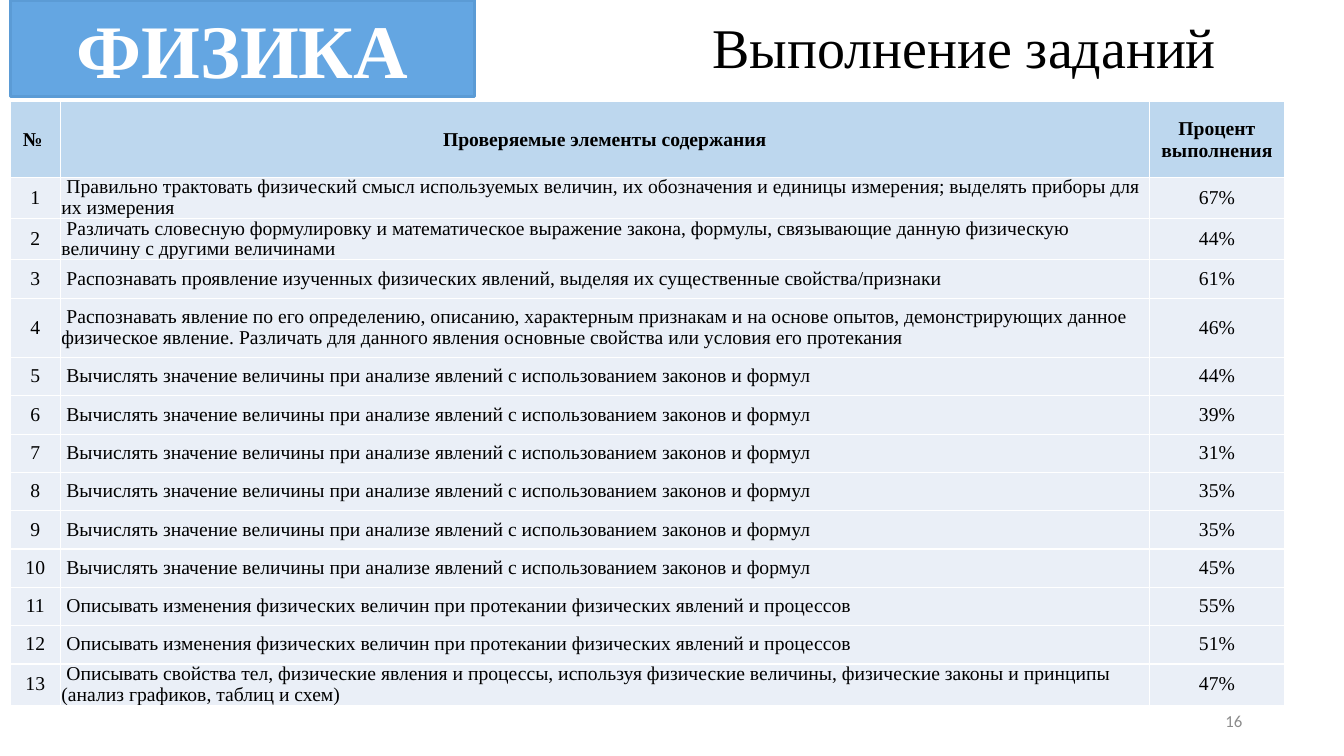
from lxml import etree
from pptx import Presentation
from pptx.dml.color import RGBColor
from pptx.enum.shapes import MSO_SHAPE
from pptx.enum.text import MSO_ANCHOR, MSO_AUTO_SIZE, PP_ALIGN
from pptx.oxml.ns import qn
from pptx.util import Inches, Pt

# Content
TITLE = "Выполнение заданий "
SUBJECT = "ФИЗИКА"
PAGE = "16"
HEADER = ("№ ", "Проверяемые элементы содержания", "Процент выполнения")
CALCULATE = "Вычислять значение величины при анализе явлений с использованием законов и формул"
DESCRIBE = "Описывать изменения физических величин при протекании физических явлений и процессов"
TASKS = [
    ("Правильно трактовать физический смысл используемых величин, их обозначения "
     "и единицы измерения; выделять приборы для их измерения", 67),
    ("Различать словесную формулировку и математическое выражение закона, формулы, "
     "связывающие данную физическую величину с другими величинами", 44),
    ("Распознавать проявление изученных физических явлений, выделяя их "
     "существенные свойства/признаки", 61),
    ("Распознавать явление по его определению, описанию, характерным признакам "
     "и на основе опытов, демонстрирующих данное физическое явление. Различать "
     "для данного явления основные свойства или условия его протекания", 46),
    (CALCULATE, 44),
    (CALCULATE, 39),
    (CALCULATE, 31),
    (CALCULATE, 35),
    (CALCULATE, 35),
    (CALCULATE, 45),
    (DESCRIBE, 55),
    (DESCRIBE, 51),
    ("Описывать свойства тел, физические явления и процессы, используя физические "
     "величины, физические законы и принципы (анализ графиков, таблиц и схем)", 47),
]

# Format
SERIF, SANS = "Times New Roman", "Calibri"
BLACK = RGBColor(0x00, 0x00, 0x00)
WHITE = RGBColor(0xFF, 0xFF, 0xFF)
GREY = RGBColor(0x8C, 0x8C, 0x8C)
BLUE = RGBColor(0x64, 0xA6, 0xE2)
BLUE_LINE = RGBColor(0x5B, 0x9B, 0xD5)
HEADER_FILL = RGBColor(0xBD, 0xD7, 0xEE)
ROW_FILL = RGBColor(0xEA, 0xEF, 0xF7)
LEFT, CENTER, RIGHT = PP_ALIGN.LEFT, PP_ALIGN.CENTER, PP_ALIGN.RIGHT
MIDDLE = MSO_ANCHOR.MIDDLE

COL_WIDTHS = (0.5, 10.8, 1.34)
HEADER_HEIGHT, ROW_HEIGHT = 0.75, 0.38
TALL_ROWS = {4: 0.59}
TASK_SPACING = 0.95  # keeps two-line rows compact


def write(tf, text, size=14, font=SERIF, color=BLACK, bold=False, align=CENTER, spacing=1.0):
    tf.word_wrap = True
    p = tf.paragraphs[0]
    p.alignment, p.line_spacing = align, spacing
    r = p.add_run()
    r.text = text
    r.font.name, r.font.size, r.font.bold = font, Pt(size), bold
    r.font.color.rgb = color


def add_borders(cell, color=WHITE, width=1):
    tcPr = cell._tc.get_or_add_tcPr()
    for side in ("a:lnL", "a:lnR", "a:lnT", "a:lnB"):
        ln = etree.SubElement(tcPr, qn(side), w=str(Pt(width)))
        fill = etree.SubElement(ln, qn("a:solidFill"))
        etree.SubElement(fill, qn("a:srgbClr"), val=str(color))


prs = Presentation()
prs.slide_width, prs.slide_height = Inches(13.33), Inches(7.5)
s = prs.slides.add_slide(prs.slide_layouts[5])

# Title
title = s.shapes.title
title.left, title.top = Inches(6.52), Inches(-0.04)
title.width, title.height = Inches(6.23), Inches(1)
title.line.color.rgb, title.line.width = WHITE, Pt(1)
tf = title.text_frame
tf.auto_size, tf.vertical_anchor = MSO_AUTO_SIZE.NONE, MIDDLE
write(tf, TITLE, size=40)

# Subject banner
sp = s.shapes.add_shape(MSO_SHAPE.RECTANGLE, Inches(0.1), 0, Inches(4.61), Inches(0.96))
sp.shadow.inherit = False
sp.fill.solid()
sp.fill.fore_color.rgb = BLUE
sp.line.color.rgb, sp.line.width = BLUE_LINE, Pt(2.25)
sp.text_frame.vertical_anchor = MIDDLE
write(sp.text_frame, SUBJECT, size=54, color=WHITE, bold=True)

# Results table
rows = [HEADER] + [(str(n), " " + skill, f"{share}%")
                   for n, (skill, share) in enumerate(TASKS, 1)]
frame = s.shapes.add_table(len(rows), len(HEADER), Inches(0.1), Inches(1.01),
                           Inches(12.65), Inches(6.1))
table = frame.table
table.horz_banding = False
for column, width in zip(table.columns, COL_WIDTHS):
    column.width = Inches(width)

for i, row in enumerate(rows):
    is_header = i == 0
    height = HEADER_HEIGHT if is_header else TALL_ROWS.get(i, ROW_HEIGHT)
    table.rows[i].height = Inches(height)
    for j, text in enumerate(row):
        cell = table.cell(i, j)
        cell.margin_left = cell.margin_right = Inches(0.01)
        cell.margin_top = cell.margin_bottom = 0
        cell.vertical_anchor = MIDDLE
        add_borders(cell)
        cell.fill.solid()
        cell.fill.fore_color.rgb = HEADER_FILL if is_header else ROW_FILL
        write(cell.text_frame, text, bold=is_header,
              align=LEFT if j == 1 and not is_header else CENTER,
              spacing=1.0 if is_header else TASK_SPACING)

# Page number, in front of the table edge
sp = s.shapes.add_textbox(Inches(9.42), Inches(6.95), Inches(3), Inches(0.4))
sp.text_frame.vertical_anchor = MIDDLE
write(sp.text_frame, PAGE, size=12, font=SANS, color=GREY, align=RIGHT)

prs.save("out.pptx")
